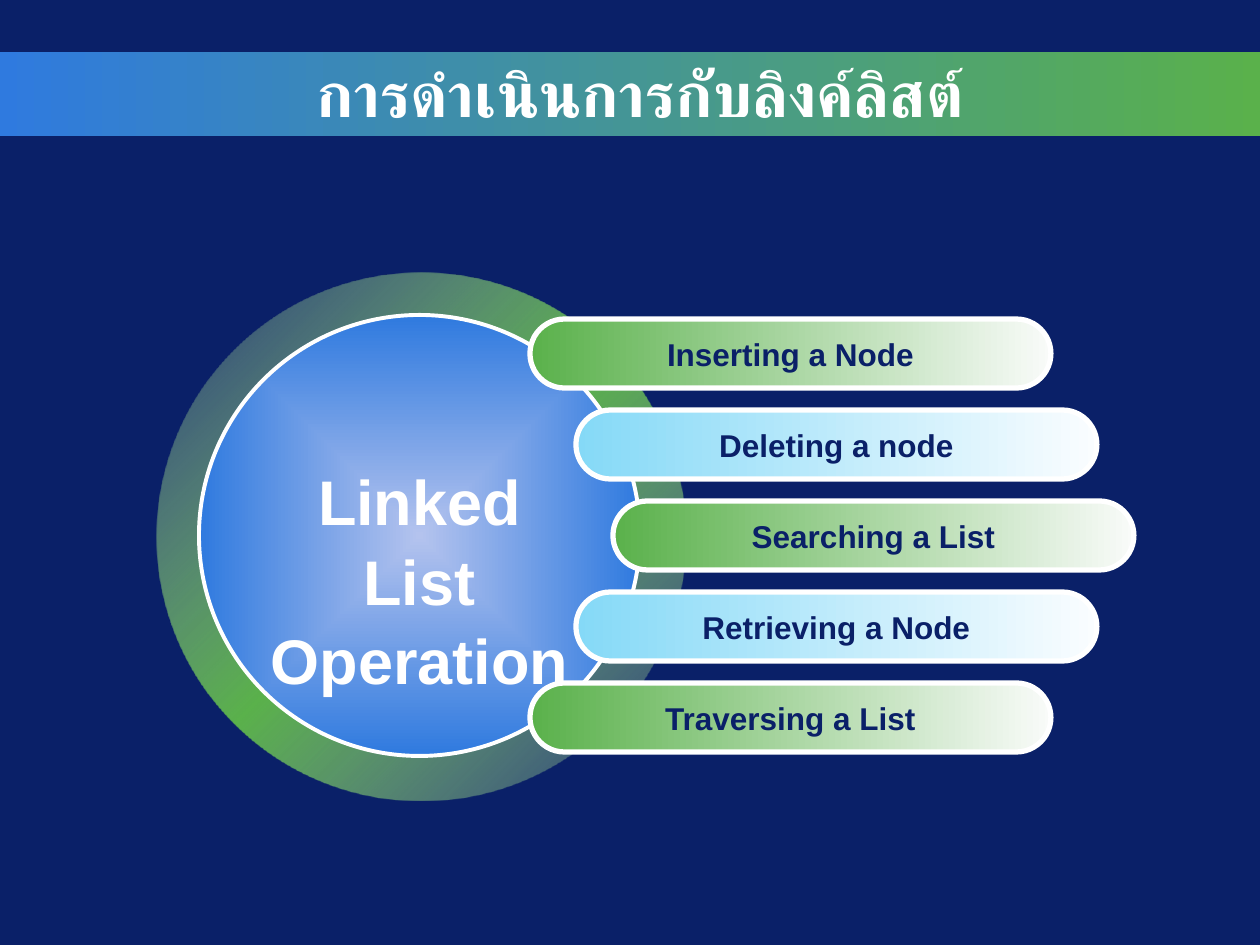
from lxml import etree
from pptx import Presentation
from pptx.dml.color import RGBColor
from pptx.enum.shapes import MSO_SHAPE
from pptx.enum.text import MSO_ANCHOR, MSO_AUTO_SIZE, PP_ALIGN
from pptx.oxml import parse_xml
from pptx.oxml.ns import qn
from pptx.util import Pt

PX = 914400 // 126
FONT = "Arial"
RECT, OVAL = MSO_SHAPE.RECTANGLE, MSO_SHAPE.OVAL
DONUT, PILL = MSO_SHAPE.DONUT, MSO_SHAPE.ROUNDED_RECTANGLE
CENTER, RIGHT = PP_ALIGN.CENTER, PP_ALIGN.RIGHT
MIDDLE = MSO_ANCHOR.MIDDLE
FIXED, GROW = MSO_AUTO_SIZE.NONE, MSO_AUTO_SIZE.SHAPE_TO_FIT_TEXT
NS = "http://schemas.openxmlformats.org/drawingml/2006/main"
COLORS = {
    "navy": "0A2068", "white": "FFFFFF", "black": "000000",
    "blue": "2F7ADF", "green": "5AB14B", "sage": "B4D4B0",
    "haze": "B4C3EE", "mint": "F9FBF9", "sky": "85D9F7", "ice": "FAFDFF",
}
BARS = [
    ("Inserting a Node", 530), ("Deleting a node", 576),
    ("Searching a List", 613), ("Retrieving a Node", 576),
    ("Traversing a List", 530),
]


def rgb(name):
    return RGBColor.from_string(COLORS[name])


class Deck:
    def __init__(self, wide, high):
        self.prs = Presentation()
        self.prs.slide_width = wide * PX
        self.prs.slide_height = high * PX
        self.slide = self.prs.slides.add_slide(self.prs.slide_layouts[5])
        back = self.slide.background.fill
        back.solid()
        back.fore_color.rgb = rgb("navy")

    def blend(self, shape, stops, angle):
        marks = "".join(
            f'<a:gs pos="{pos * 1000}"><a:srgbClr val="{COLORS[name]}">'
            f'<a:alpha val="{alpha * 1000}"/></a:srgbClr></a:gs>'
            for pos, name, alpha in stops)
        if angle is None:
            way = ('<a:path path="shape"><a:fillToRect l="50000" t="50000" '
                   'r="50000" b="50000"/></a:path>')
        else:
            way = f'<a:lin ang="{angle * 60000}" scaled="0"/>'
        grad = parse_xml(f'<a:gradFill xmlns:a="{NS}" rotWithShape="1">'
                         f'<a:gsLst>{marks}</a:gsLst>{way}</a:gradFill>')
        shape.element.spPr.find(qn("a:prstGeom")).addnext(grad)

    def shape(self, kind, box, stops, angle=0, line=0, adj=None):
        item = self.slide.shapes.add_shape(kind, *[n * PX for n in box])
        item.shadow.inherit = False
        self.blend(item, stops, angle)
        if line:
            item.line.color.rgb = rgb("white")
            item.line.width = Pt(line)
        else:
            item.line.fill.background()
        if adj is not None:
            item.adjustments[0] = adj
        return item

    def text(self, frame, words, size, color, align):
        frame.text = words
        para = frame.paragraphs[0]
        para.alignment = align
        run = para.runs[0]
        run.font.size = Pt(size)
        run.font.bold = True
        run.font.name = FONT
        run.font.color.rgb = rgb(color)
        return para

    def bar(self, words, box, tint, fade):
        item = self.shape(PILL, box, [(0, tint, 100), (100, fade, 100)],
                          line=3, adj=0.5)
        frame = item.text_frame
        frame.word_wrap = False
        frame.vertical_anchor = MIDDLE
        self.text(frame, words, 18, "navy", CENTER)

    def label(self, words, box):
        item = self.slide.shapes.add_textbox(*[n * PX for n in box])
        frame = item.text_frame
        frame.word_wrap = True
        frame.auto_size = GROW
        para = self.text(frame, words, 36, "white", CENTER)
        para.line_spacing = 1.05
        shade = parse_xml(
            f'<a:effectLst xmlns:a="{NS}"><a:outerShdw dist="35921" '
            f'dir="2700000"><a:srgbClr val="{COLORS["black"]}"/>'
            '</a:outerShdw></a:effectLst>')
        fill = next(item.element.iter(qn("a:solidFill")))
        fill.addnext(shade)

    def title(self, words, box):
        item = self.slide.shapes.title
        item.left, item.top, item.width, item.height = [n * PX for n in box]
        frame = item.text_frame
        frame.auto_size = FIXED
        frame.vertical_anchor = MIDDLE
        self.text(frame, words, 36, "white", RIGHT)
        latin = next(item.element.iter(qn("a:latin")))
        etree.SubElement(latin.getparent(), qn("a:cs"), typeface=FONT)
        item.element.getparent().append(item.element)


def main():
    deck = Deck(1260, 945)
    deck.shape(RECT, (0, 52, 1260, 84),
               [(0, "blue", 100), (100, "green", 100)])
    deck.shape(DONUT, (157, 273, 528, 528),
               [(0, "sage", 12), (50, "green", 100), (100, "sage", 12)],
               angle=45, adj=0.09)
    deck.shape(OVAL, (199, 315, 441, 441),
               [(0, "haze", 100), (100, "blue", 100)], angle=None, line=2.25)
    tints = [("green", "mint"), ("sky", "ice")]
    for i, (words, left) in enumerate(BARS):
        deck.bar(words, (left, 319 + 91 * i, 521, 69), *tints[i % 2])
    deck.label("Linked List Operation", (257, 453, 325, 165))
    deck.title("การดำเนินการกับลิงค์ลิสต์", (63, 53, 913, 78))
    deck.prs.save("out.pptx")


if __name__ == "__main__":
    main()
